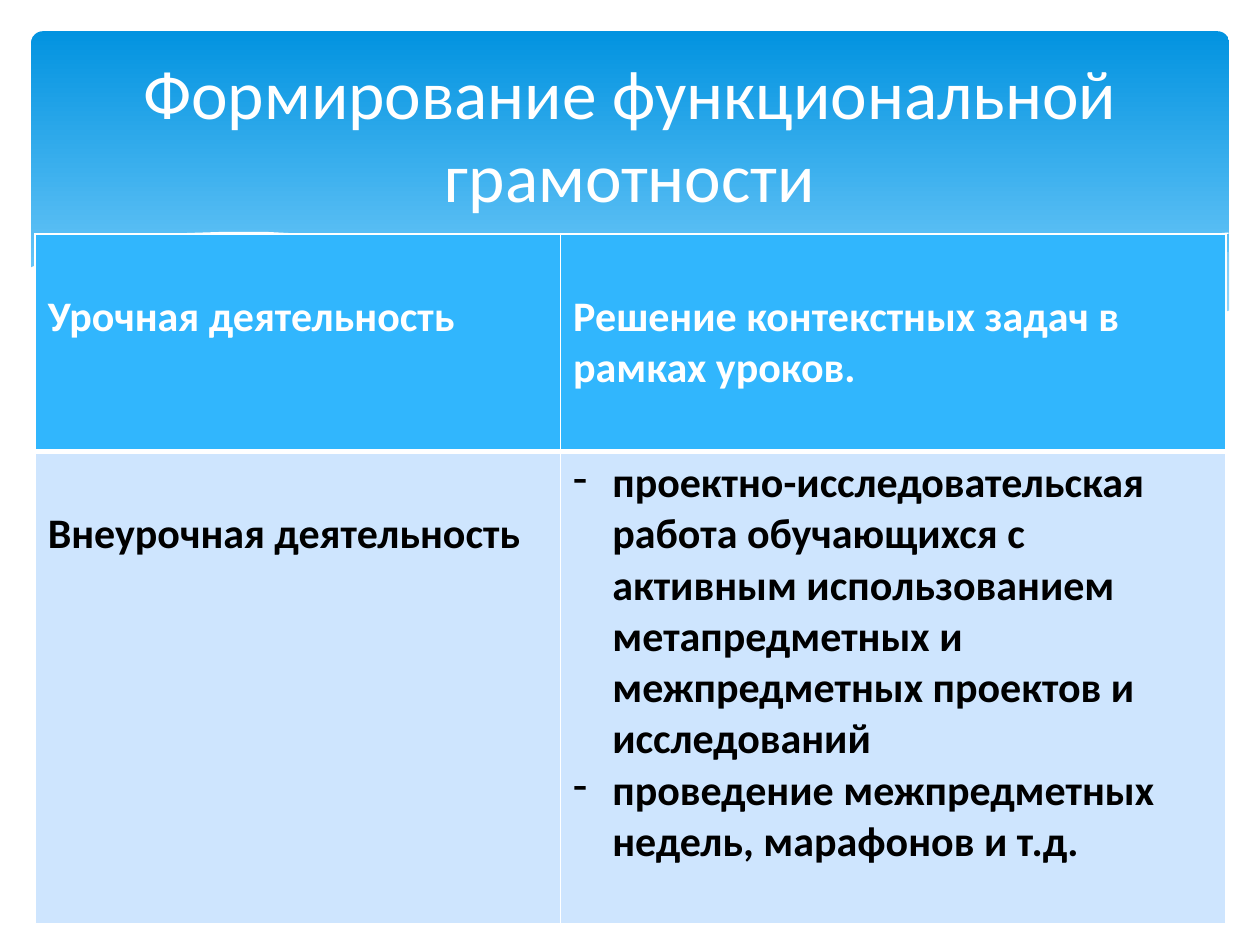
import dataclasses

import pptx
import pptx.dml.color
import pptx.enum.shapes
import pptx.enum.text
import pptx.oxml
import pptx.oxml.ns
import pptx.util

Cm = pptx.util.Cm
Pt = pptx.util.Pt
UNIT = Cm(0.0254)  # wave points are in hundredths of an inch

BACK = [(975, 200), (935, 207), (861, 223), (779, 242), (706, 257), (661, 265),
        (705, 271), (757, 276), (803, 278), (854, 276), (897, 270), (935, 262),
        (976, 247), (976, 200)]
MID = [(893, 273), (837, 265), (775, 254), (706, 240), (629, 222), (569, 208),
       (514, 198), (465, 191), (399, 186), (344, 186), (286, 191), (342, 199),
       (404, 211), (491, 232), (566, 248), (634, 261), (695, 270), (748, 276),
       (796, 278), (848, 277)]
CREST = [(309, 195), (344, 190), (387, 187), (433, 187), (489, 190), (556, 197),
         (608, 204), (665, 213), (727, 226), (795, 241), (869, 261), (907, 272)]
RISE = [(613, 257), (672, 241), (748, 223), (806, 210), (866, 199), (910, 192),
        (951, 187), (975, 185)]
FRONT = [(977, 246), (940, 259), (899, 269), (850, 275), (809, 277), (761, 275),
         (708, 270), (648, 262), (579, 250), (503, 233), (447, 220), (391, 207),
         (340, 197), (292, 190), (250, 186), (211, 184), (177, 184), (146, 185),
         (119, 187), (95, 191), (76, 195), (52, 201), (36, 207), (23, 213),
         (23, 329), (977, 329)]


@dataclasses.dataclass(frozen=True)
class Theme:
    font: str = "Calibri"
    white: str = "FFFFFF"
    black: str = "000000"
    deep: str = "0293E0"
    light: str = "83D3FE"
    mist: str = "C6E7FC"
    head: str = "31B6FD"
    body: str = "CEE5FE"
    title: float = 39.6
    text: float = 24


def rgb(code):
    return pptx.dml.color.RGBColor.from_string(code)


class Deck:
    def __init__(self, theme):
        self.theme = theme
        self.prs = pptx.Presentation()
        self.prs.slide_width, self.prs.slide_height = Cm(25.4), Cm(19.05)
        self.slide = self.prs.slides.add_slide(self.prs.slide_layouts[6])

    def panel(self, *box):
        kind = pptx.enum.shapes.MSO_SHAPE.ROUNDED_RECTANGLE
        shape = self.slide.shapes.add_shape(kind, *map(Cm, box))
        shape.shadow.inherit = False
        shape.adjustments[0] = 0.034
        shape.line.fill.background()
        shape.fill.gradient()
        shape.fill.gradient_angle = 270
        stops = ((0, self.theme.deep), (0.9, self.theme.light))
        for stop, (place, color) in zip(shape.fill.gradient_stops, stops):
            stop.position = place
            stop.color.rgb = rgb(color)

    def trace(self, points, closed):
        build = self.slide.shapes.build_freeform(*points[0], scale=UNIT)
        build.add_line_segments(points[1:], close=closed)
        shape = build.convert_to_shape()
        shape.shadow.inherit = False
        return shape

    def wave(self, points, color, alpha=100):
        shape = self.trace(points, True)
        shape.line.fill.background()
        shape.fill.solid()
        shape.fill.fore_color.rgb = rgb(color)
        if alpha < 100:
            tint = shape.element.spPr.find(".//" + pptx.oxml.ns.qn("a:srgbClr"))
            tint.append(pptx.oxml.parse_xml(
                f'<a:alpha {pptx.oxml.ns.nsdecls("a")} val="{alpha * 1000}"/>'))

    def curve(self, points):
        shape = self.trace(points, False)
        shape.fill.background()
        shape.line.color.rgb = rgb(self.theme.white)
        shape.line.width = Pt(0)

    def say(self, para, text, size, color, bold=False):
        """Add one styled run to a paragraph."""
        run = para.add_run()
        run.text = text
        run.font.name, run.font.size, run.font.bold = self.theme.font, Pt(size), bold
        run.font.color.rgb = rgb(color)

    def title(self, text, *box):
        frame = self.slide.shapes.add_textbox(*map(Cm, box)).text_frame
        frame.word_wrap = True
        frame.vertical_anchor = pptx.enum.text.MSO_ANCHOR.MIDDLE
        para = frame.paragraphs[0]
        para.alignment = pptx.enum.text.PP_ALIGN.CENTER
        self.say(para, text, self.theme.title, self.theme.white)

    def edge(self, cell, side, width):
        cell._tc.get_or_add_tcPr().append(pptx.oxml.parse_xml(
            f'<a:ln{side} {pptx.oxml.ns.nsdecls("a")} w="{Pt(width)}"><a:solidFill>'
            f'<a:srgbClr val="{self.theme.white}"/></a:solidFill></a:ln{side}>'))

    def bullet(self, para):
        props = para._p.get_or_add_pPr()
        props.set("marL", str(Cm(0.79)))
        props.set("indent", str(-Cm(0.79)))
        props.append(pptx.oxml.parse_xml(
            f'<a:buChar {pptx.oxml.ns.nsdecls("a")} char="-"/>'))

    def cell(self, cell, lines, head):
        theme = self.theme
        for side in "LRTB":
            thick = side == ("B" if head else "T")
            self.edge(cell, side, 3 if thick else 1)
        cell.fill.solid()
        cell.fill.fore_color.rgb = rgb(theme.head if head else theme.body)
        listed = len(lines) > 1
        cell.margin_top = Cm(0.13 if listed else 1.16)
        for i, line in enumerate(lines):
            frame = cell.text_frame
            para = frame.add_paragraph() if i else frame.paragraphs[0]
            if listed:
                self.bullet(para)
            self.say(para, line, theme.text, theme.white if head else theme.black, True)

    def table(self, rows, left, top, widths, heights):
        grid = self.slide.shapes.add_table(
            len(rows), len(widths), Cm(left), Cm(top),
            Cm(sum(widths)), Cm(sum(heights))).table
        grid.horz_banding = False
        for col, width in zip(grid.columns, widths):
            col.width = Cm(width)
        for r, (row, height) in enumerate(zip(rows, heights)):
            grid.rows[r].height = Cm(height)
            for c, lines in enumerate(row):
                self.cell(grid.cell(r, c), lines, r == 0)


def main():
    theme = Theme()
    deck = Deck(theme)
    deck.panel(0.63, 0.63, 24.15, 6.86)
    deck.wave(BACK, theme.mist, 29)
    deck.wave(MID, theme.mist, 40)
    deck.curve(CREST)
    deck.curve(RISE)
    deck.wave(FRONT, theme.white)
    rows = [
        [["Урочная деятельность"], ["Решение контекстных задач в рамках уроков."]],
        [["Внеурочная деятельность"],
         ["проектно-исследовательская работа обучающихся с активным использованием "
          "метапредметных и межпредметных проектов и исследований",
          "проведение межпредметных недель, марафонов и т.д."]],
    ]
    deck.table(rows, 0.71, 4.72, (10.59, 13.41), (4.38, 9.53))
    deck.title("Формирование функциональной грамотности", 1.27, 0.94, 22.86, 3.48)
    deck.prs.save("out.pptx")


if __name__ == "__main__":
    main()
